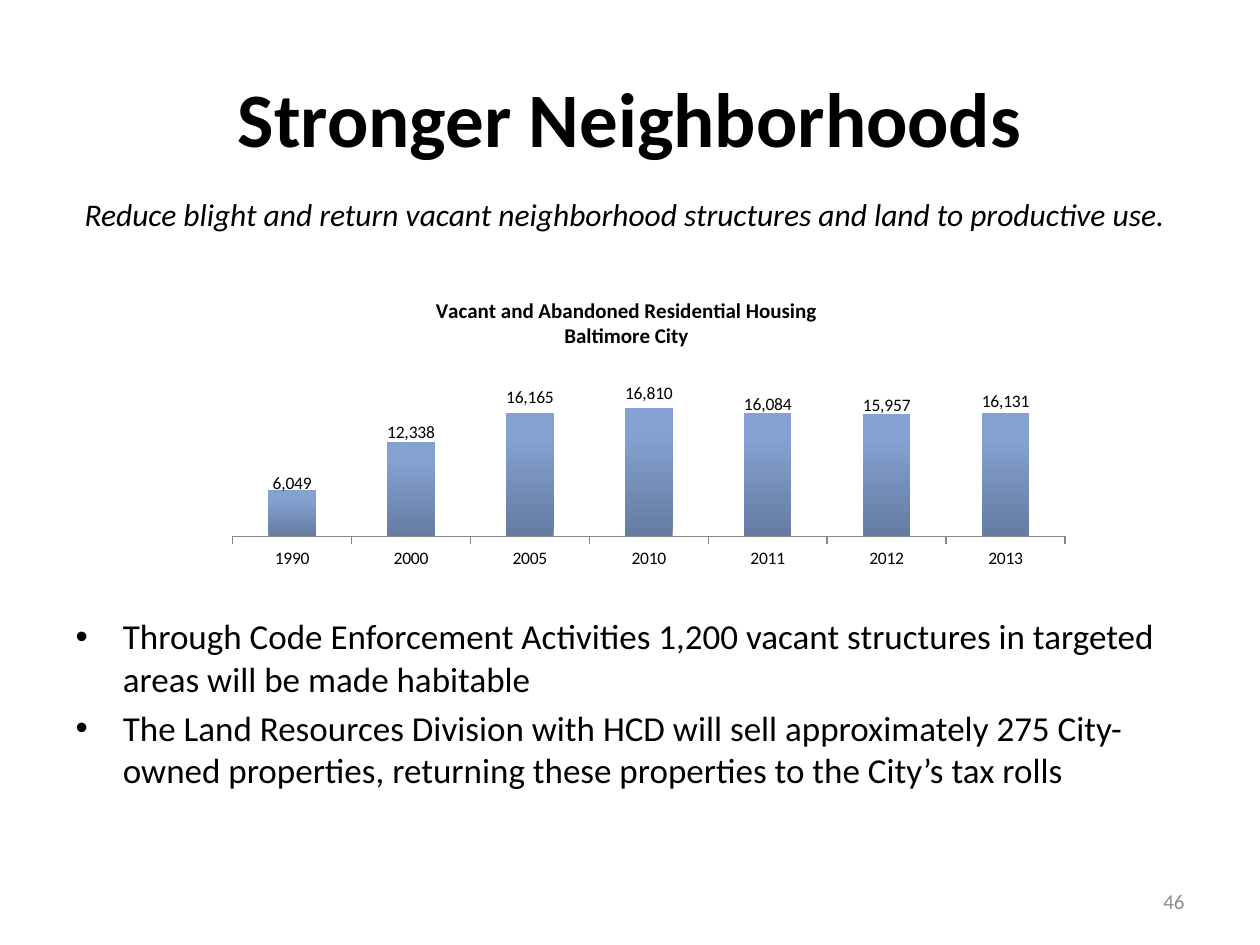
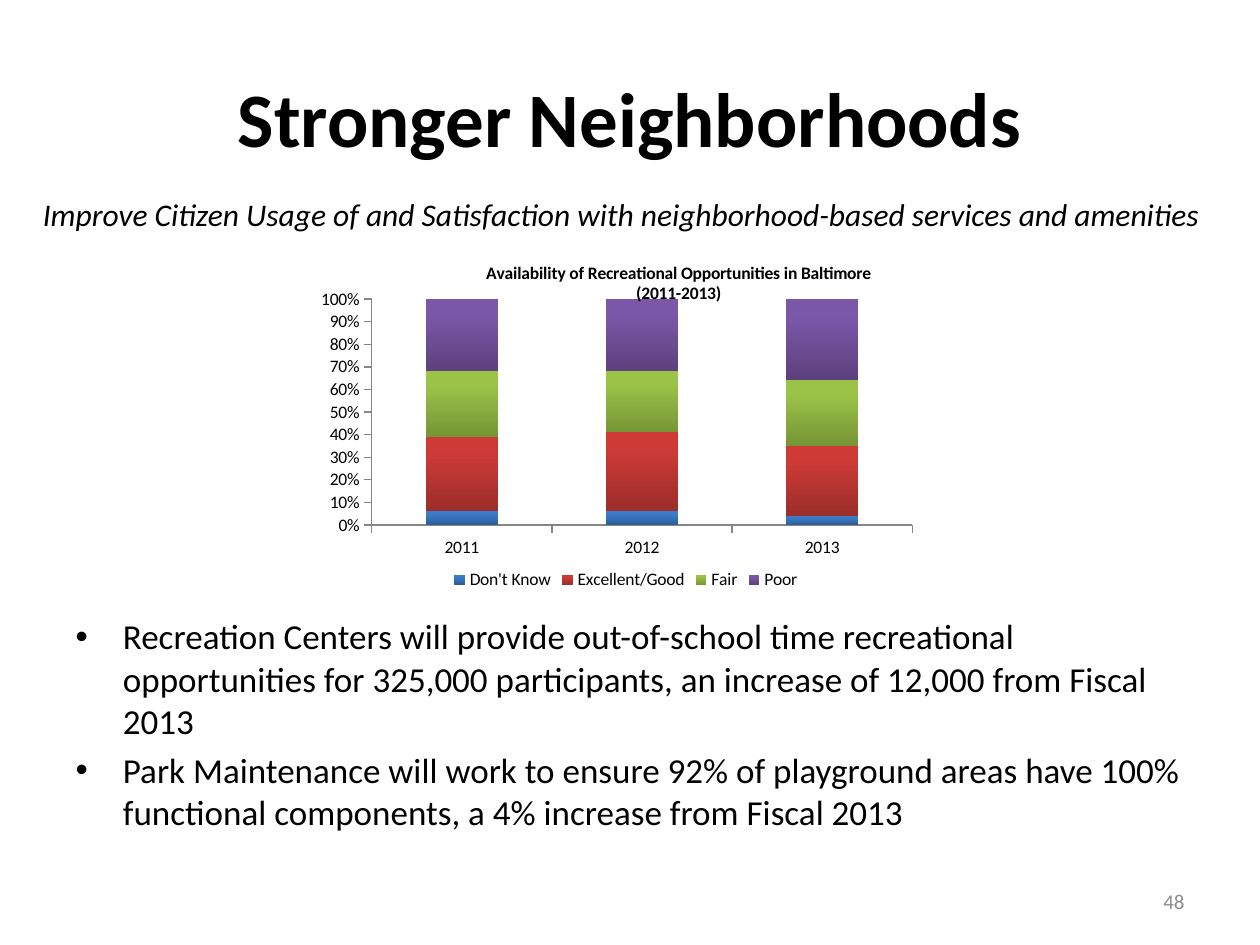
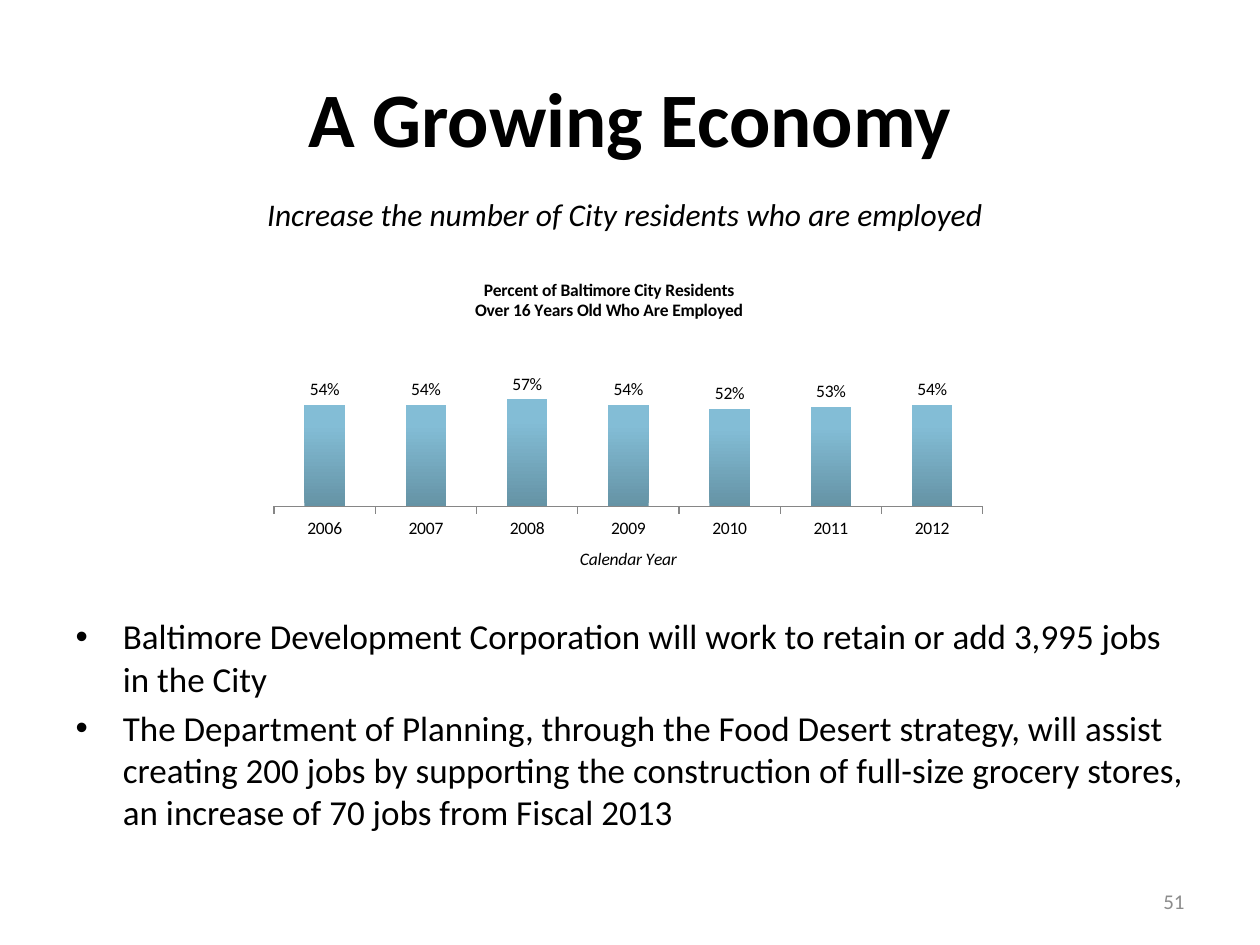
import pptx
import pptx.chart.data
import pptx.dml.color
import pptx.enum.chart
import pptx.enum.text
import pptx.oxml
import pptx.oxml.ns
import pptx.util
from pptx.util import Cm

FONT = "Calibri"
COLORS = {"text": "000000", "number": "8C8C8C", "axis": "868686"}
# Each gradient runs from a dark foot to a light top.
GRADIENTS = {
    "slate": ("657CA2", "84A1D1"),
    "aqua": ("6593A5", "83BDD6"),
    "blue": ("2C5D98", "3C7BC7"),
    "red": ("9B2D2A", "CE3B37"),
    "green": ("769535", "9BC348"),
    "purple": ("5D417E", "7B57A8"),
}
TITLE_AREA = (1.27, 0.76, 22.86, 3.18)
GOAL_AREA = (0, 3.81, 25.2, 1.02)
ACTIONS_AREA = (1.27, 12.27, 22.91, 5.38)
NUMBER_AREA = (18.21, 17.65, 5.92, 1.02)
CHART_TYPE = pptx.enum.chart.XL_CHART_TYPE
ALIGN = pptx.enum.text.PP_ALIGN
MIDDLE = pptx.enum.text.MSO_ANCHOR.MIDDLE


def rgb(hex_color):
    return pptx.dml.color.RGBColor.from_string(hex_color)


def style_font(font, size, color="text", bold=False, italic=False):
    font.name = FONT
    font.size = pptx.util.Pt(size)
    font.bold = bold
    font.italic = italic
    font.color.rgb = rgb(COLORS[color])


def style_text(frame, size, align=None, **style):
    for paragraph in frame.paragraphs:
        paragraph.alignment = align
        for run in paragraph.runs:
            style_font(run.font, size, **style)


def fill_placeholder(placeholder, area, text):
    placeholder.left, placeholder.top, placeholder.width, placeholder.height = map(Cm, area)
    frame = placeholder.text_frame
    frame.text = text
    frame.auto_size = pptx.enum.text.MSO_AUTO_SIZE.NONE
    return frame


def add_line_of_text(slide, area, text, size, align, **style):
    frame = slide.shapes.add_textbox(*map(Cm, area)).text_frame
    frame.word_wrap = True
    frame.vertical_anchor = MIDDLE
    frame.text = text
    style_text(frame, size, align, **style)


def add_goal_slide(deck, title, goal, actions, number):
    slide = deck.slides.add_slide(deck.slide_layouts[1])
    heading = fill_placeholder(slide.shapes.title, TITLE_AREA, title)
    heading.vertical_anchor = MIDDLE
    style_text(heading, 44, ALIGN.CENTER, bold=True)
    action_list = fill_placeholder(slide.placeholders[1], ACTIONS_AREA, "\n".join(actions))
    style_text(action_list, 20)
    action_list.paragraphs[0].space_before = pptx.util.Pt(0)
    add_line_of_text(slide, GOAL_AREA, goal, 18, ALIGN.CENTER, italic=True)
    add_line_of_text(slide, NUMBER_AREA, str(number), 12, ALIGN.RIGHT, color="number")
    return slide


def set_layout(parent, index, inner=False, **fractions):
    """Place a chart part by fractions x, y, w, h of the chart; a label's are offsets."""
    for previous in parent.findall(pptx.oxml.ns.qn("c:layout")):
        parent.remove(previous)
    parts = '<c:layoutTarget val="inner"/>' if inner else ""
    if "w" in fractions:
        parts += '<c:xMode val="edge"/><c:yMode val="edge"/>'
    elif parent.tag == pptx.oxml.ns.qn("c:title"):
        parts += '<c:xMode val="edge"/><c:yMode val="edge"/>'
    parts += "".join(f'<c:{key} val="{value}"/>' for key, value in fractions.items())
    parent.insert(index, pptx.oxml.parse_xml(
        f'<c:layout {pptx.oxml.ns.nsdecls("c")}>'
        f"<c:manualLayout>{parts}</c:manualLayout></c:layout>"))


def fill_gradient(fill, gradient):
    fill.gradient()
    fill.gradient_angle = 90
    foot, top = fill.gradient_stops
    foot.color.rgb, top.color.rgb = map(rgb, GRADIENTS[gradient])
    foot.position, top.position = 0, 0.8


def style_axis(axis):
    axis.has_major_gridlines = False
    axis.major_tick_mark = pptx.enum.chart.XL_TICK_MARK.OUTSIDE
    axis.format.line.color.rgb = rgb(COLORS["axis"])
    style_font(axis.tick_labels.font, 10)


def add_columns(slide, kind, area, years, series, title, title_size, title_at,
                plot_at, number_format, maximum, step):
    """Add a column chart; series maps each name to its values and gradient."""
    data = pptx.chart.data.CategoryChartData(number_format=number_format)
    data.categories = years
    for name, (values, _) in series.items():
        data.add_series(name, values)
    chart = slide.shapes.add_chart(kind, *map(Cm, area), data).chart
    style_font(chart.font, 10)
    chart.has_legend = False

    chart.has_title = True
    heading = chart.chart_title.text_frame
    heading.text = title
    style_text(heading, title_size, ALIGN.CENTER, bold=True)
    set_layout(chart._chartSpace.chart.find(pptx.oxml.ns.qn("c:title")), 1,
               x=title_at[0], y=title_at[1])
    set_layout(chart._chartSpace.chart.plotArea, 0, inner=True,
               **dict(zip("xywh", plot_at)))

    style_axis(chart.category_axis)
    amounts = chart.value_axis
    style_axis(amounts)
    amounts.minimum_scale, amounts.maximum_scale = 0, maximum
    amounts.major_unit = step
    amounts.tick_labels.number_format = number_format
    amounts.tick_labels.number_format_is_linked = False

    columns = chart.plots[0]
    columns.gap_width = 150
    columns.vary_by_categories = False
    for drawn, (_, gradient) in zip(columns.series, series.values()):
        fill_gradient(drawn.format.fill, gradient)
    return chart


def label_columns(chart, number_format, drops=None):
    """Put values over the columns and hide the value axis; drops lower some labels."""
    chart.value_axis.visible = False
    series = chart.plots[0].series[0]
    labels = series.data_labels
    labels.show_value = True
    labels.number_format = number_format
    labels.number_format_is_linked = False
    labels.position = pptx.enum.chart.XL_LABEL_POSITION.OUTSIDE_END
    style_font(labels.font, 10)
    drops = drops or {}
    for index in drops:
        label = series.points[index].data_label
        label.position = pptx.enum.chart.XL_LABEL_POSITION.OUTSIDE_END
        style_font(label.font, 10)
    moved = chart._chartSpace.iter(pptx.oxml.ns.qn("c:dLbl"))
    for label_xml, drop in zip(list(moved), drops.values()):
        set_layout(label_xml, 1, x=0, y=drop)


def add_vacant_housing(deck):
    slide = add_goal_slide(
        deck, "Stronger Neighborhoods",
        "Reduce blight and return vacant neighborhood structures and land to productive use.",
        ["Through Code Enforcement Activities 1,200 vacant structures in targeted areas "
         "will be made habitable",
         "The Land Resources Division with HCD will sell approximately 275 City-owned "
         "properties, returning these properties to the City’s tax rolls"], 46)
    homes = [6049, 12338, 16165, 16810, 16084, 15957, 16131]
    chart = add_columns(
        slide, CHART_TYPE.COLUMN_CLUSTERED, (4.34, 5.72, 17.48, 5.92),
        ["1990", "2000", "2005", "2010", "2011", "2012", "2013"],
        {"Series 1": (homes, "slate")},
        "Vacant and Abandoned Residential Housing\nBaltimore City", 12, (0.25, 0.03),
        (0.02, 0.21, 0.96, 0.65), "#,##0", 25000, 5000)
    label_columns(chart, "#,##0", {0: 0.03, 1: 0.02, 4: 0.02, 5: 0.02, 6: 0.01})


def add_recreation(deck):
    slide = add_goal_slide(
        deck, "Stronger Neighborhoods",
        "Improve Citizen Usage of and Satisfaction with neighborhood-based services "
        "and amenities ",
        ["Recreation Centers will provide out-of-school time recreational opportunities "
         "for 325,000 participants, an increase of 12,000 from Fiscal 2013",
         "Park Maintenance will work to ensure 92% of playground areas have 100% "
         "functional components, a 4% increase from Fiscal 2013"], 48)
    answers = {
        "Don't Know": ([0.06, 0.06, 0.04], "blue"),
        "Excellent/Good": ([0.33, 0.35, 0.31], "red"),
        "Fair": ([0.29, 0.27, 0.29], "green"),
        "Poor": ([0.32, 0.33, 0.37], "purple"),
    }
    chart = add_columns(
        slide, CHART_TYPE.COLUMN_STACKED, (6.05, 4.98, 13.13, 7.01),
        ["2011", "2012", "2013"], answers,
        "Availability of Recreational Opportunities in Baltimore\n(2011-2013)",
        10, (0.28, 0.03), (0.11, 0.15, 0.83, 0.65), "0%", 1, 0.1)
    chart.plots[0].overlap = 100
    chart.has_legend = True
    chart.legend.position = pptx.enum.chart.XL_LEGEND_POSITION.BOTTOM
    chart.legend.include_in_layout = False
    style_font(chart.legend.font, 10)


def add_employment(deck):
    slide = add_goal_slide(
        deck, "A Growing Economy", "Increase the number of City residents who are employed",
        ["Baltimore Development Corporation will work to retain or add 3,995 jobs in the City",
         "The Department of Planning, through the Food Desert strategy, will assist creating "
         "200 jobs by supporting the construction of full-size grocery stores, an increase "
         "of 70 jobs from Fiscal 2013"], 51)
    employed = [0.54, 0.54, 0.57, 0.54, 0.52, 0.53, 0.54]
    chart = add_columns(
        slide, CHART_TYPE.COLUMN_CLUSTERED, (5.23, 5.28, 14.73, 6.32),
        [str(year) for year in range(2006, 2013)], {"Series 1": (employed, "aqua")},
        "Percent of Baltimore City Residents\nOver 16 Years Old Who Are Employed",
        10, (0.29, 0.04), (0.02, 0.18, 0.97, 0.6), "0%", 1, 0.2)
    label_columns(chart, "0%")
    calendar = chart.category_axis.axis_title.text_frame
    calendar.text = "Calendar Year"
    style_text(calendar, 10, italic=True)


def main():
    deck = pptx.Presentation()
    deck.slide_width, deck.slide_height = Cm(25.4), Cm(19.05)
    add_vacant_housing(deck)
    add_recreation(deck)
    add_employment(deck)
    deck.save("out.pptx")


if __name__ == "__main__":
    main()
